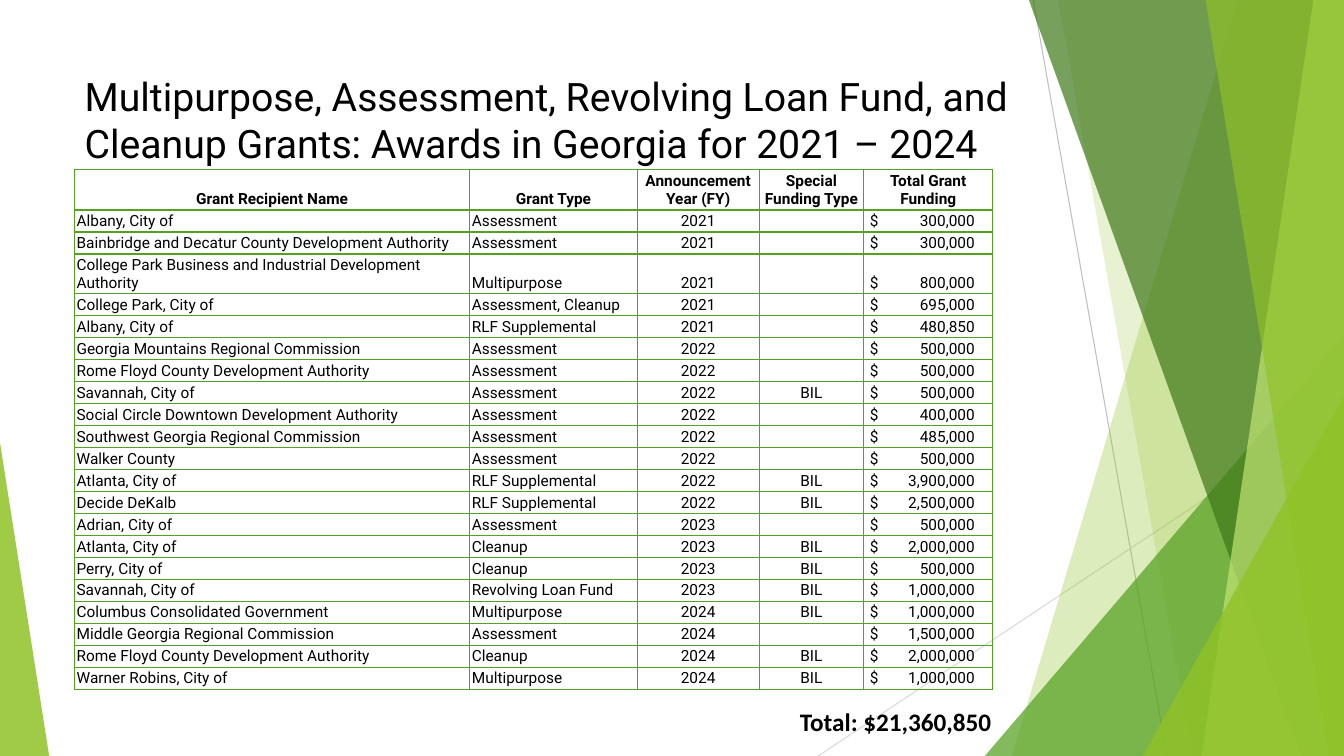
"""Build the slide of Georgia grant awards for 2021 to 2024."""
from lxml.etree import SubElement
from pptx import Presentation
from pptx.dml.color import RGBColor
from pptx.enum.shapes import MSO_CONNECTOR as Connector, MSO_SHAPE as Shape
from pptx.enum.text import MSO_ANCHOR as Anchor, MSO_AUTO_SIZE as AutoSize, PP_ALIGN as Align
from pptx.oxml.ns import qn
from pptx.util import Cm, Pt

WIDTH, HEIGHT = 33.87, 19.05
TITLE = ("Multipurpose, Assessment, Revolving Loan Fund, and Cleanup Grants: "
         "Awards in Georgia for 2021 – 2024")
TOTAL = "Total: $21,360,850"
HEADERS = ["Grant Recipient Name", "Grant Type", "Announcement Year (FY)",
           "Special Funding Type", "Total Grant Funding"]
GRANTS = [
    ("Albany, City of", "Assessment", 2021, "", 300000),
    ("Bainbridge and Decatur County Development Authority", "Assessment", 2021, "", 300000),
    ("College Park Business and Industrial Development Authority", "Multipurpose", 2021, "", 800000),
    ("College Park, City of", "Assessment, Cleanup", 2021, "", 695000),
    ("Albany, City of", "RLF Supplemental", 2021, "", 480850),
    ("Georgia Mountains Regional Commission", "Assessment", 2022, "", 500000),
    ("Rome Floyd County Development Authority", "Assessment", 2022, "", 500000),
    ("Savannah, City of", "Assessment", 2022, "BIL", 500000),
    ("Social Circle Downtown Development Authority", "Assessment", 2022, "", 400000),
    ("Southwest Georgia Regional Commission", "Assessment", 2022, "", 485000),
    ("Walker County", "Assessment", 2022, "", 500000),
    ("Atlanta, City of", "RLF Supplemental", 2022, "BIL", 3900000),
    ("Decide DeKalb", "RLF Supplemental", 2022, "BIL", 2500000),
    ("Adrian, City of", "Assessment", 2023, "", 500000),
    ("Atlanta, City of", "Cleanup", 2023, "BIL", 2000000),
    ("Perry, City of", "Cleanup", 2023, "BIL", 500000),
    ("Savannah, City of", "Revolving Loan Fund", 2023, "BIL", 1000000),
    ("Columbus Consolidated Government", "Multipurpose", 2024, "BIL", 1000000),
    ("Middle Georgia Regional Commission", "Assessment", 2024, "", 1500000),
    ("Rome Floyd County Development Authority", "Cleanup", 2024, "BIL", 2000000),
    ("Warner Robins, City of", "Multipurpose", 2024, "BIL", 1000000),
]
COLUMN_WIDTHS = [9.96, 4.22, 3.07, 2.64, 3.25]
COLUMN_ALIGNS = [Align.LEFT, Align.LEFT, Align.CENTER, Align.CENTER, Align.LEFT]
AMOUNT_COLUMN = 4
ROW_HEIGHT, HEADER_HEIGHT = 0.55, 1.02
CELL_MARGIN, AMOUNT_MARGIN, AMOUNT_TAB = 0.05, 0.15, 2.65

RAYS = [((26.04, 0), (29.41, HEIGHT), "BFBFBF"),
        ((WIDTH, 10.24), (20.62, HEIGHT), "D9D9D9")]
# Bands give top and bottom x; triangles give left, top, width and apex.
FACETS = [
    ("band", (31.19, 25.5), "90C226", 30),
    ("band", (26.67, 30.05), "90C226", 20),
    ("triangle", (24.82, 8.46, 9.05, 1), "54A021", 72),
    ("band", (25.93, 32.79), "3F7819", 70),
    ("band", (33.1, 30.28), "C0E474", 70),
    ("band", (30.38, 33.48), "90C226", 65),
    ("triangle", (28.8, 9.98, 5.07, 1), "90C226", 80),
    ("triangle", (0, 11.15, 1.24, 0), "90C226", 85),
]


def color(value):
    return RGBColor.from_string(value)


def format_paragraph(paragraph, size, font_name, bold=False, align=Align.LEFT):
    paragraph.alignment = align
    font = paragraph.font
    font.size, font.name, font.bold = Pt(size), font_name, bold
    font.color.rgb = color("000000")


def add_ray(slide, start, end, line_color):
    ray = slide.shapes.add_connector(Connector.STRAIGHT, *map(Cm, start + end))
    ray.line.color.rgb = color(line_color)
    ray.line.width = Pt(0.75)
    SubElement(ray._element.spPr, qn("a:effectLst"))


def add_facet(slide, kind, geometry, fill_color, opacity):
    if kind == "band":
        top_x, bottom_x = geometry
        builder = slide.shapes.build_freeform(Cm(top_x), 0)
        corners = [(WIDTH, 0), (WIDTH, HEIGHT), (bottom_x, HEIGHT)]
        builder.add_line_segments([(Cm(x), Cm(y)) for x, y in corners], close=True)
        facet = builder.convert_to_shape()
    else:
        left, top, width, apex = geometry
        facet = slide.shapes.add_shape(Shape.ISOSCELES_TRIANGLE, Cm(left), Cm(top),
                                       Cm(width), Cm(HEIGHT - top))
        facet.adjustments[0] = apex
    facet.shadow.inherit = False
    facet.line.fill.background()
    facet.fill.solid()
    facet.fill.fore_color.rgb = color(fill_color)
    tint = facet._element.spPr.find(".//" + qn("a:srgbClr"))
    SubElement(tint, qn("a:alpha"), val=str(opacity * 1000))


def add_borders(cell):
    properties = cell._tc.get_or_add_tcPr()
    for position, side in enumerate(("a:lnL", "a:lnR", "a:lnT", "a:lnB")):
        border = SubElement(properties, qn(side), w=str(Pt(1)))
        fill = SubElement(border, qn("a:solidFill"))
        SubElement(fill, qn("a:srgbClr"), val="54A021")
        properties.insert(position, border)


def add_amount_tab(paragraph):
    properties = paragraph._p.get_or_add_pPr()
    tabs = SubElement(properties, qn("a:tabLst"))
    SubElement(tabs, qn("a:tab"), pos=str(Cm(AMOUNT_TAB)), algn="r")
    properties.insert(0, tabs)


def fill_cell(cell, text, column, is_header):
    cell.fill.background()
    add_borders(cell)
    cell.vertical_anchor = Anchor.BOTTOM
    is_amount = column == AMOUNT_COLUMN and not is_header
    cell.margin_left = Cm(AMOUNT_MARGIN if is_amount else CELL_MARGIN)
    cell.margin_right = cell.margin_top = cell.margin_bottom = Cm(CELL_MARGIN)
    paragraph = cell.text_frame.paragraphs[0]
    paragraph.text = text
    align = Align.CENTER if is_header else COLUMN_ALIGNS[column]
    format_paragraph(paragraph, 11, "Roboto", is_header, align)
    if is_amount:
        add_amount_tab(paragraph)
    if not text:
        SubElement(paragraph._p, qn("a:endParaRPr"), sz="1100")


def add_grant_table(slide):
    rows = [HEADERS] + [(name, kind, str(year), funding, f"$\t{amount:,}")
                        for name, kind, year, funding, amount in GRANTS]
    height = HEADER_HEIGHT + ROW_HEIGHT * len(GRANTS)
    table = slide.shapes.add_table(len(rows), len(HEADERS), Cm(1.88), Cm(4.27),
                                   Cm(sum(COLUMN_WIDTHS)), Cm(height)).table
    table.first_row = table.horz_banding = False
    for column, width in zip(table.columns, COLUMN_WIDTHS):
        column.width = Cm(width)
    for row_index, values in enumerate(rows):
        table.rows[row_index].height = Cm(ROW_HEIGHT if row_index else HEADER_HEIGHT)
        for column_index, text in enumerate(values):
            fill_cell(table.cell(row_index, column_index), text, column_index, row_index == 0)


def add_title(slide):
    title = slide.shapes.title
    title.left, title.top, title.width, title.height = map(Cm, (1.88, 1.7, 23.88, 3.66))
    frame = title.text_frame
    frame.text = TITLE
    frame.word_wrap = True
    frame.auto_size = AutoSize.NONE
    frame.vertical_anchor = Anchor.TOP
    format_paragraph(frame.paragraphs[0], 28, "Roboto")


def add_total(slide):
    frame = slide.shapes.add_textbox(Cm(19.91), Cm(17.68), Cm(5.72), Cm(1.02)).text_frame
    frame.word_wrap = True
    frame.text = TOTAL
    format_paragraph(frame.paragraphs[0], 18, "Calibri", bold=True)


def main():
    presentation = Presentation()
    presentation.slide_width, presentation.slide_height = Cm(WIDTH), Cm(HEIGHT)
    slide = presentation.slides.add_slide(presentation.slide_layouts[5])
    for ray in RAYS:
        add_ray(slide, *ray)
    for facet in FACETS:
        add_facet(slide, *facet)
    add_title(slide)
    add_grant_table(slide)
    add_total(slide)
    presentation.save("out.pptx")


if __name__ == "__main__":
    main()
